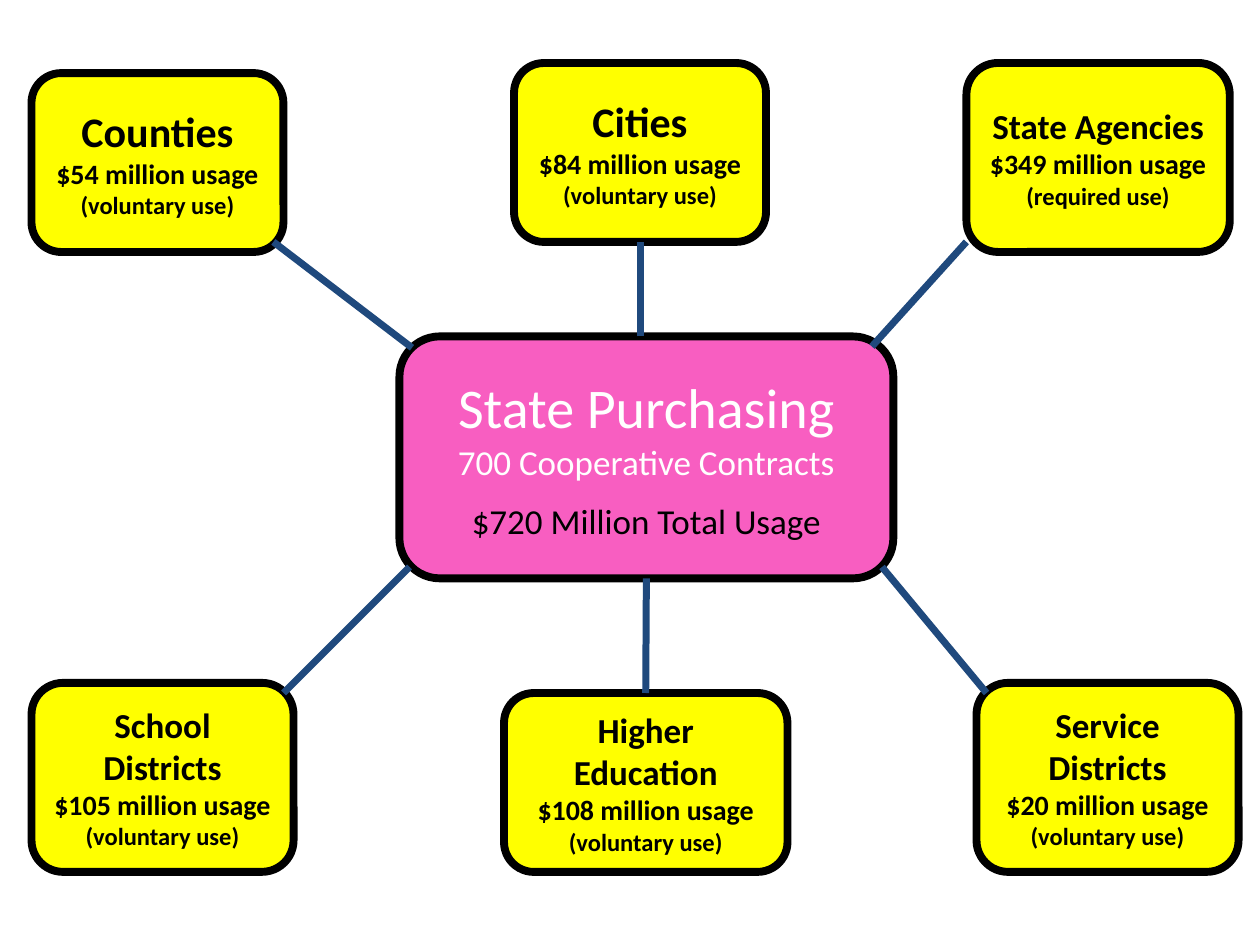
import pptx
import pptx.util
import pptx.dml.color
import pptx.enum.shapes
import pptx.enum.text
import pptx.oxml.ns
import lxml.etree

Inches = pptx.util.Inches
Pt = pptx.util.Pt

YELLOW, PINK, BLUE = "FFFF00", "F85EC1", "1F497D"
BLACK, WHITE = "000000", "FFFFFF"
TOP, BOTTOM = 0, 2  # connection sites

# Name, amount, use, name size, left, top, width, height
MEMBERS = [
    ("Service Districts", "$20 million", "voluntary", 20, 7.75, 5.42, 2.08, 1.5),
    ("Higher Education", "$108 million", "voluntary", 20, 4, 5.5, 2.25, 1.42),
    ("State Agencies", "$349 million", "required", 20, 7.67, 0.5, 2.09, 1.5),
    ("School Districts", "$105 million", "voluntary", 20, 0.25, 5.42, 2.08, 1.5),
    ("Cities", "$84 million", "voluntary", 24, 4.08, 0.5, 2, 1.42),
    ("Counties", "$54 million", "voluntary", 24, 0.25, 0.58, 2, 1.42),
]

# Spokes that meet the boxes near their corners
CORNER_SPOKES = [
    (7, 4.5, 7.83, 5.5),
    (7.67, 1.92, 6.92, 2.75),
    (3.25, 4.5, 2.25, 5.5),
    (2.17, 1.92, 3.27, 2.76),
]


def rgb(color):
    return pptx.dml.color.RGBColor.from_string(color)


def add_box(s, left, top, width, height, fill, lines, bold=False):
    """Rounded box; each line of text is (text, size, colour)."""
    box = s.shapes.add_shape(
        pptx.enum.shapes.MSO_SHAPE.ROUNDED_RECTANGLE,
        Inches(left), Inches(top), Inches(width), Inches(height))
    box.shadow.inherit = False
    box.fill.solid()
    box.fill.fore_color.rgb = rgb(fill)
    box.line.color.rgb = rgb(BLACK)
    box.line.width = Pt(4.5)

    tf = box.text_frame
    tf.word_wrap = True
    tf.vertical_anchor = pptx.enum.text.MSO_ANCHOR.MIDDLE
    tf.text = "\n".join(text for text, _, _ in lines)
    for p, (_, size, color) in zip(tf.paragraphs, lines):
        p.alignment = pptx.enum.text.PP_ALIGN.CENTER
        font = p.runs[0].font
        font.name = "Calibri"
        font.size = Pt(size)
        font.bold = bold
        font.color.rgb = rgb(color)
    return box


def add_spoke(s, x1, y1, x2, y2):
    spoke = s.shapes.add_connector(
        pptx.enum.shapes.MSO_CONNECTOR.STRAIGHT,
        Inches(x1), Inches(y1), Inches(x2), Inches(y2))
    spoke.line.color.rgb = rgb(BLUE)
    spoke.line.width = Pt(4)
    lxml.etree.SubElement(spoke._element.spPr, pptx.oxml.ns.qn("a:effectLst"))
    return spoke


def main():
    prs = pptx.Presentation()
    prs.slide_width, prs.slide_height = Inches(10), Inches(7.5)
    s = prs.slides.add_slide(prs.slide_layouts[6])

    # Member groups
    members = {}
    for name, amount, use, size, *place in MEMBERS:
        lines = [(name, size, BLACK), (f"{amount} usage", 16, BLACK),
                 (f"({use} use)", 14, BLACK)]
        members[name] = add_box(s, *place, YELLOW, lines, bold=True)

    # Central hub
    hub = add_box(s, 3.17, 2.67, 3.92, 1.92, PINK, [
        ("State Purchasing", 32, WHITE),
        ("700 Cooperative Contracts", 20, WHITE),
        ("$720 Million Total Usage", 20, BLACK)])
    hub.text_frame.paragraphs[2].space_before = Pt(10)

    # Spokes
    spoke = add_spoke(s, 5.12, 5.5, 5.13, 4.58)
    spoke.begin_connect(members["Higher Education"], TOP)
    spoke.end_connect(hub, BOTTOM)
    for ends in CORNER_SPOKES:
        add_spoke(s, *ends)
    spoke = add_spoke(s, 5.08, 2.67, 5.08, 1.92)
    spoke.end_connect(members["Cities"], BOTTOM)

    prs.save("out.pptx")


if __name__ == "__main__":
    main()
